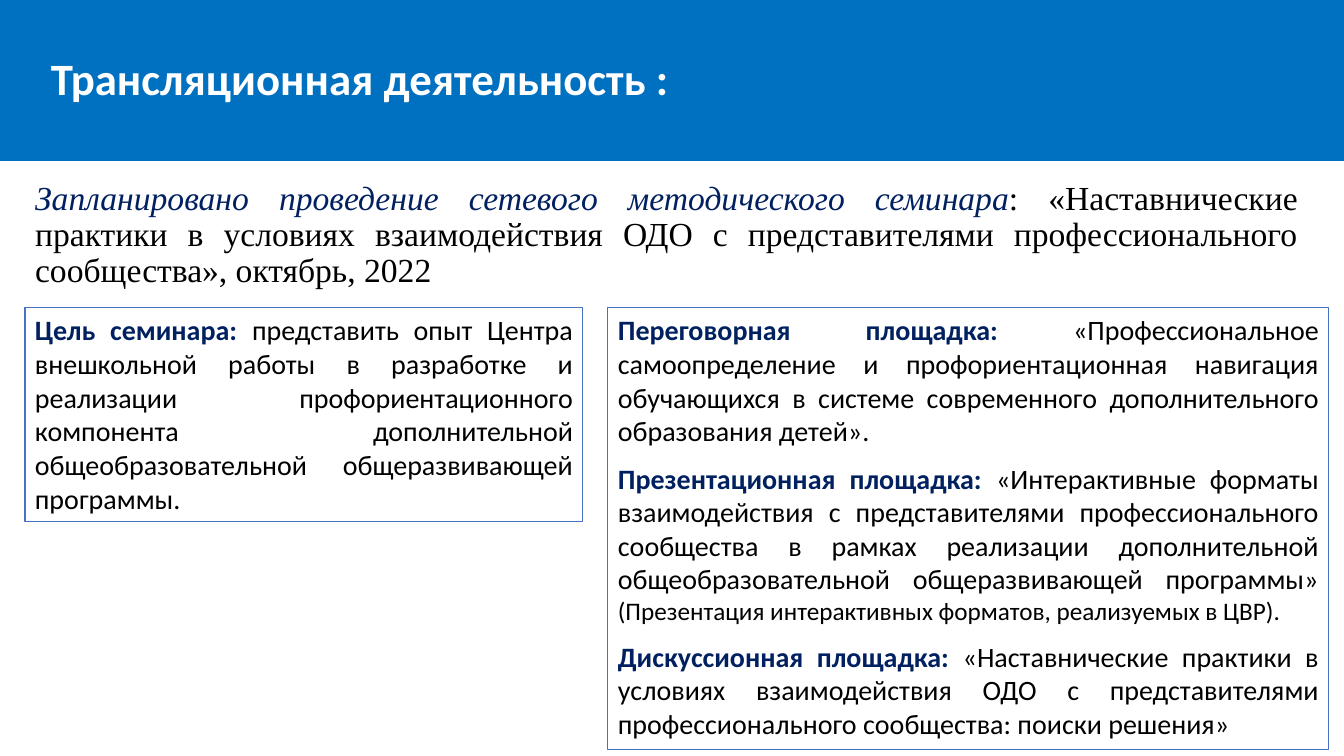
import dataclasses
import pptx
import pptx.util
import pptx.dml.color
import pptx.enum.shapes
import pptx.enum.text
import pptx.oxml.xmlchemy
from lxml import etree

RGB = pptx.dml.color.RGBColor.from_string
ALIGN = pptx.enum.text.PP_ALIGN
ANCHOR = pptx.enum.text.MSO_ANCHOR
FIT = pptx.enum.text.MSO_AUTO_SIZE
DRAW = "{http://schemas.openxmlformats.org/drawingml/2006/main}"


@dataclasses.dataclass(frozen=True)
class Theme:
    band: str = "0070C0"
    white: str = "FFFFFF"
    navy: str = "002060"
    ink: str = "000000"
    edge: str = "4472C4"
    sans: str = "Calibri"
    serif: str = "Times New Roman"
    title: int = 32
    lead: int = 24
    text: int = 20
    note: int = 18


THEME = Theme()


def px(num):
    return round(num * 914400 / 100.8)


def place(shape, box):
    shape.left, shape.top, shape.width, shape.height = map(px, box)


def add_run(para, text, size, color, font=THEME.sans, bold=False, italic=False):
    run = para.add_run()
    run.text = text
    run.font.size = pptx.util.Pt(size)
    run.font.name = font
    run.font.color.rgb = RGB(color)
    run.font.bold = bold
    run.font.italic = italic


def set_frame(frame, anchor, fit=FIT.NONE):
    frame.word_wrap = True
    frame.auto_size = fit
    frame.vertical_anchor = anchor


def add_title(slide, box):
    title = slide.shapes.title
    place(title, box)
    title.fill.solid()
    title.fill.fore_color.rgb = RGB(THEME.band)
    frame = title.text_frame
    set_frame(frame, ANCHOR.MIDDLE)
    frame.margin_left = px(51)
    para = frame.paragraphs[0]
    para.alignment = ALIGN.LEFT
    para.line_spacing = 0.9
    add_run(para, "Трансляционная деятельность :", THEME.title, THEME.white, bold=True)


def add_lead(slide, box):
    body = slide.placeholders[1]
    place(body, box)
    set_frame(body.text_frame, ANCHOR.TOP)
    para = body.text_frame.paragraphs[0]
    para.alignment = ALIGN.JUSTIFY
    para.line_spacing = 0.9
    para.space_before = pptx.util.Pt(10)
    # No bullet and no hanging indent
    props = para._p.get_or_add_pPr()
    props.set("marL", "0")
    props.set("indent", "0")
    etree.SubElement(props, DRAW + "buNone")
    add_run(para, "Запланировано проведение сетевого методического семинара",
            THEME.lead, THEME.navy, THEME.serif, italic=True)
    add_run(para, ": «Наставнические практики в условиях взаимодействия ОДО "
            "с представителями профессионального сообщества», октябрь, 2022",
            THEME.lead, THEME.ink, THEME.serif)


def add_panel(slide, box, items):
    kind = pptx.enum.shapes.MSO_SHAPE.RECTANGLE
    panel = slide.shapes.add_shape(kind, *map(px, box))
    panel.shadow.inherit = False
    panel.fill.background()
    panel.line.color.rgb = RGB(THEME.edge)
    panel.line.width = pptx.util.Pt(0.75)
    frame = panel.text_frame
    set_frame(frame, ANCHOR.TOP, FIT.SHAPE_TO_FIT_TEXT)
    for order, (head, text, note) in enumerate(items):
        para = frame.add_paragraph() if order else frame.paragraphs[0]
        para.alignment = ALIGN.JUSTIFY
        para.space_before = pptx.util.Pt(9.75 if order else 0)
        add_run(para, head + " ", THEME.text, THEME.navy, bold=True)
        add_run(para, text, THEME.text, THEME.ink)
        if note:
            add_run(para, " " + note, THEME.note, THEME.ink)


GOAL = [
    ("Цель семинара:",
     "представить опыт Центра внешкольной работы в разработке и реализации "
     "профориентационного компонента дополнительной общеобразовательной "
     "общеразвивающей программы.", ""),
]
VENUES = [
    ("Переговорная площадка:",
     "«Профессиональное самоопределение и профориентационная навигация "
     "обучающихся в системе современного дополнительного образования детей».", ""),
    ("Презентационная площадка:",
     "«Интерактивные форматы взаимодействия с представителями "
     "профессионального сообщества в рамках реализации дополнительной "
     "общеобразовательной общеразвивающей программы»",
     "(Презентация интерактивных форматов, реализуемых в ЦВР)."),
    ("Дискуссионная площадка:",
     "«Наставнические практики в условиях взаимодействия ОДО с "
     "представителями профессионального сообщества: поиски решения»", ""),
]


def main():
    deck = pptx.Presentation()
    deck.slide_width, deck.slide_height = px(1344), px(756)
    slide = deck.slides.add_slide(deck.slide_layouts[1])

    # Heading band and lead text
    add_title(slide, (0, 0, 1344, 161))
    add_lead(slide, (25, 176, 1283, 121))

    # Goal on the left, venues on the right
    add_panel(slide, (25, 308, 558, 214), GOAL)
    add_panel(slide, (608, 308, 721, 442), VENUES)

    deck.save("out.pptx")


if __name__ == "__main__":
    main()
